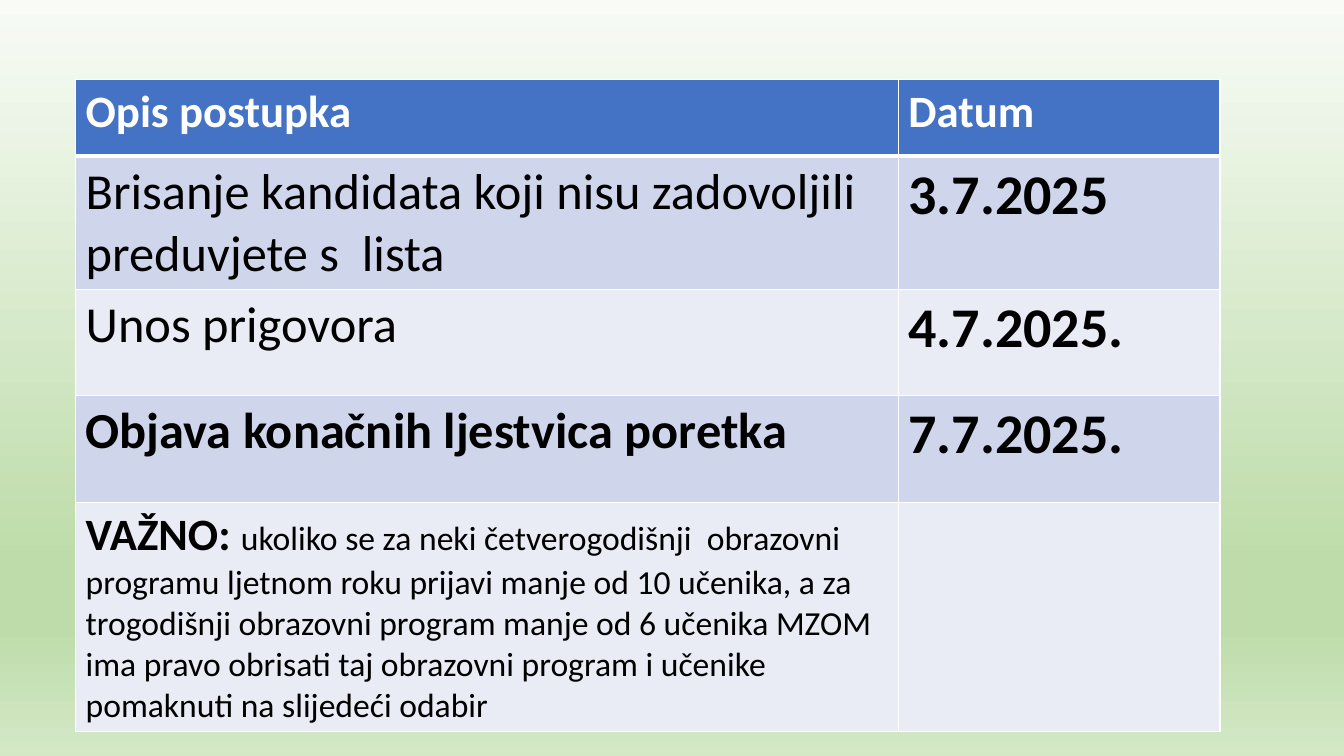
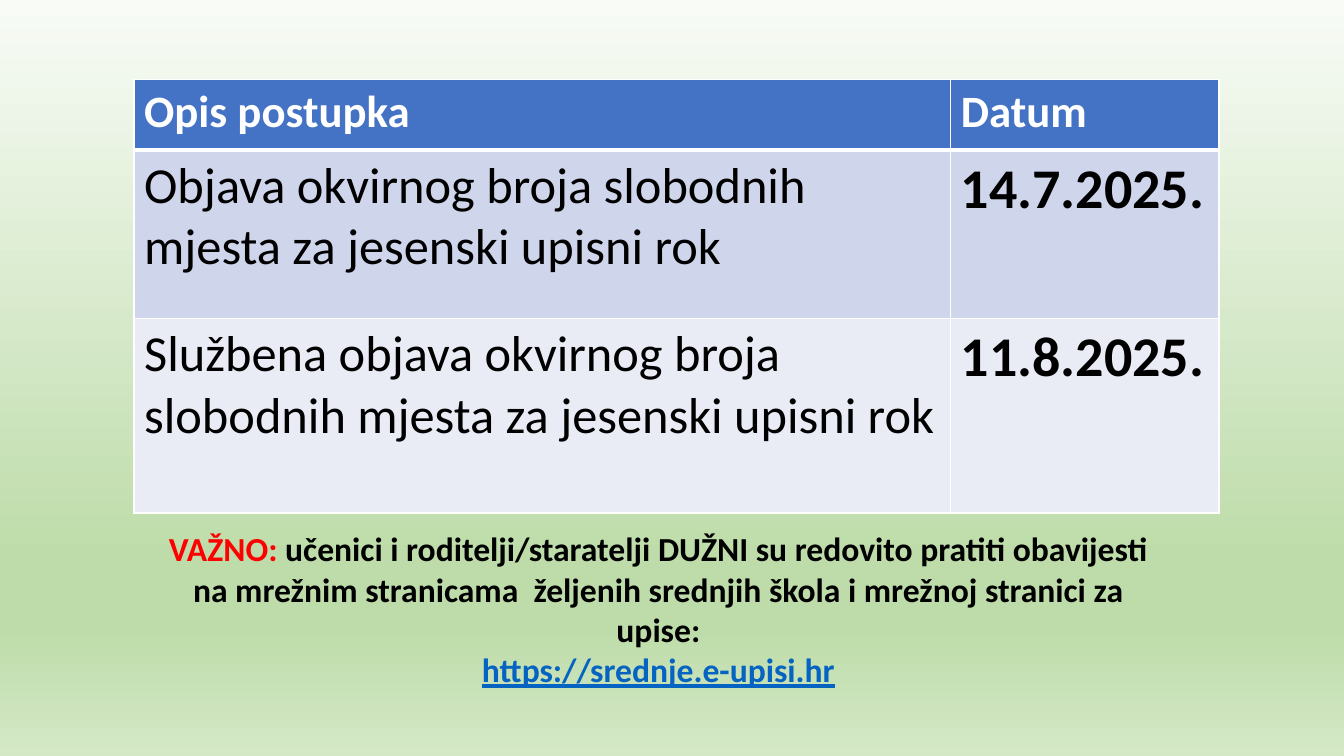
import dataclasses

import lxml.etree
import pptx
import pptx.dml.color
import pptx.enum.text
import pptx.oxml.ns
import pptx.util

Inches = pptx.util.Inches
Pt = pptx.util.Pt

# Shared look
FONT = "Calibri"
BLACK, WHITE, RED, LINK_BLUE = "000000", "FFFFFF", "FF0000", "0563C1"
HEADER_FILL = "4472C4"
BAND_FILLS = ("CFD5EA", "E9EBF5")
BACKGROUND_STOPS = ((0, "F8FBF6"), (74, "BEDCAA"), (83, "BEDCAA"), (100, "D4E8C6"))
TABLE_TOP = 0.79
HEADER = ("Opis postupka", "Datum")


@dataclasses.dataclass(frozen=True)
class Span:
    text: str
    size: float
    bold: bool = False
    color: str = BLACK
    underline: bool = False


@dataclasses.dataclass(frozen=True)
class Step:
    description: tuple[Span, ...]
    date: str
    height: float


@dataclasses.dataclass(frozen=True)
class Schedule:
    left: float
    column_widths: tuple[float, float]
    header_height: float
    steps: tuple[Step, ...]


def rgb(color: str) -> pptx.dml.color.RGBColor:
    return pptx.dml.color.RGBColor.from_string(color)


def add_element(parent, tag: str, **attributes: str):
    element = lxml.etree.SubElement(parent, pptx.oxml.ns.qn(tag))
    for name, value in attributes.items():
        element.set(name, value)
    return element


def write_spans(paragraph, spans: tuple[Span, ...]) -> None:
    for span in spans:
        run = paragraph.add_run()
        run.text = span.text
        run.font.name = FONT
        run.font.size = Pt(span.size)
        run.font.bold = span.bold
        run.font.underline = span.underline
        run.font.color.rgb = rgb(span.color)


# Background: vertical gradient
def paint_background(slide) -> None:
    fill = slide.background.fill
    fill.gradient()
    fill.gradient_angle = 270
    stop_list = next(slide.background._cSld.iter(pptx.oxml.ns.qn("a:gsLst")))
    for stop in list(stop_list):
        stop_list.remove(stop)
    for position, color in BACKGROUND_STOPS:
        stop = add_element(stop_list, "a:gs", pos=str(position * 1000))
        add_element(stop, "a:srgbClr", val=color)


# Table cells
def set_borders(cell, top: float, bottom: float) -> None:
    properties = cell._tc.get_or_add_tcPr()
    widths = {"a:lnL": 1, "a:lnR": 1, "a:lnT": top, "a:lnB": bottom}
    for index, (tag, width) in enumerate(widths.items()):
        line = add_element(properties, tag, w=str(Pt(width)))
        add_element(add_element(line, "a:solidFill"), "a:srgbClr", val=WHITE)
        properties.insert(index, line)


def fill_cell(cell, spans: tuple[Span, ...], color: str, top: float, bottom: float) -> None:
    cell.fill.solid()
    cell.fill.fore_color.rgb = rgb(color)
    set_borders(cell, top, bottom)
    write_spans(cell.text_frame.paragraphs[0], spans)


def add_schedule(slide, schedule: Schedule) -> None:
    heights = [schedule.header_height] + [step.height for step in schedule.steps]
    table = slide.shapes.add_table(
        len(heights), 2, Inches(schedule.left), Inches(TABLE_TOP),
        Inches(sum(schedule.column_widths)), Inches(sum(heights)),
    ).table
    for column, width in zip(table.columns, schedule.column_widths):
        column.width = Inches(width)
    for row, height in zip(table.rows, heights):
        row.height = Inches(height)

    for column, title in enumerate(HEADER):
        fill_cell(table.cell(0, column), (Span(title, 32, True, WHITE),), HEADER_FILL, 1, 3)
    for index, step in enumerate(schedule.steps):
        color = BAND_FILLS[index % 2]
        top = 3 if index == 0 else 1
        date = (Span(step.date, 40, True),) if step.date else ()
        fill_cell(table.cell(index + 1, 0), step.description, color, top, 1)
        fill_cell(table.cell(index + 1, 1), date, color, top, 1)


# Centred note below a table
def add_note(slide, paragraphs: tuple[tuple[Span, ...], ...]) -> None:
    box = slide.shapes.add_textbox(Inches(1.39), Inches(5.19), Inches(10.28), Inches(1.65))
    frame = box.text_frame
    frame.word_wrap = True
    for index, spans in enumerate(paragraphs):
        paragraph = frame.paragraphs[0] if index == 0 else frame.add_paragraph()
        paragraph.alignment = pptx.enum.text.PP_ALIGN.CENTER
        paragraph.line_spacing = 1.0
        write_spans(paragraph, spans)


# Content
RESULTS = Schedule(0.75, (8.16, 3.19), 0.76, (
    Step((Span("Brisanje kandidata koji nisu zadovoljili preduvjete s  lista", 36),),
         "3.7.2025", 1.32),
    Step((Span("Unos prigovora", 36),), "4.7.2025.", 1.05),
    Step((Span("Objava konačnih ljestvica poretka", 36, True),), "7.7.2025.", 1.06),
    Step((Span("VAŽNO: ", 32, True),
          Span("ukoliko se za neki četverogodišnji  obrazovni programu ljetnom roku "
               "prijavi manje od 10 učenika, a za trogodišnji obrazovni program manje "
               "od 6 učenika MZOM ima pravo obrisati taj obrazovni program i učenike "
               "pomaknuti na slijedeći odabir", 24)),
         "", 2.27),
))

AUTUMN = Schedule(1.33, (8.1, 2.66), 0.7, (
    Step((Span("Objava okvirnog broja slobodnih mjesta za jesenski upisni rok", 36),),
         "14.7.2025.", 1.67),
    Step((Span("Službena objava okvirnog broja slobodnih mjesta za jesenski upisni rok", 36),),
         "11.8.2025.", 1.93),
))

AUTUMN_NOTE = (
    (Span("VAŽNO: ", 24, True, RED),
     Span("učenici i roditelji/staratelji DUŽNI su redovito pratiti obavijesti na mrežnim "
          "stranicama  željenih srednjih škola i mrežnoj stranici za upise:", 24, True)),
    (Span("https://srednje.e-upisi.hr", 24, True, LINK_BLUE, True),),
)


def main() -> None:
    presentation = pptx.Presentation()
    presentation.slide_width = Inches(13.33)
    presentation.slide_height = Inches(7.5)
    for schedule, note in ((RESULTS, ()), (AUTUMN, AUTUMN_NOTE)):
        slide = presentation.slides.add_slide(presentation.slide_layouts[6])
        paint_background(slide)
        if note:
            add_note(slide, note)
        add_schedule(slide, schedule)
    presentation.save("out.pptx")


if __name__ == "__main__":
    main()
